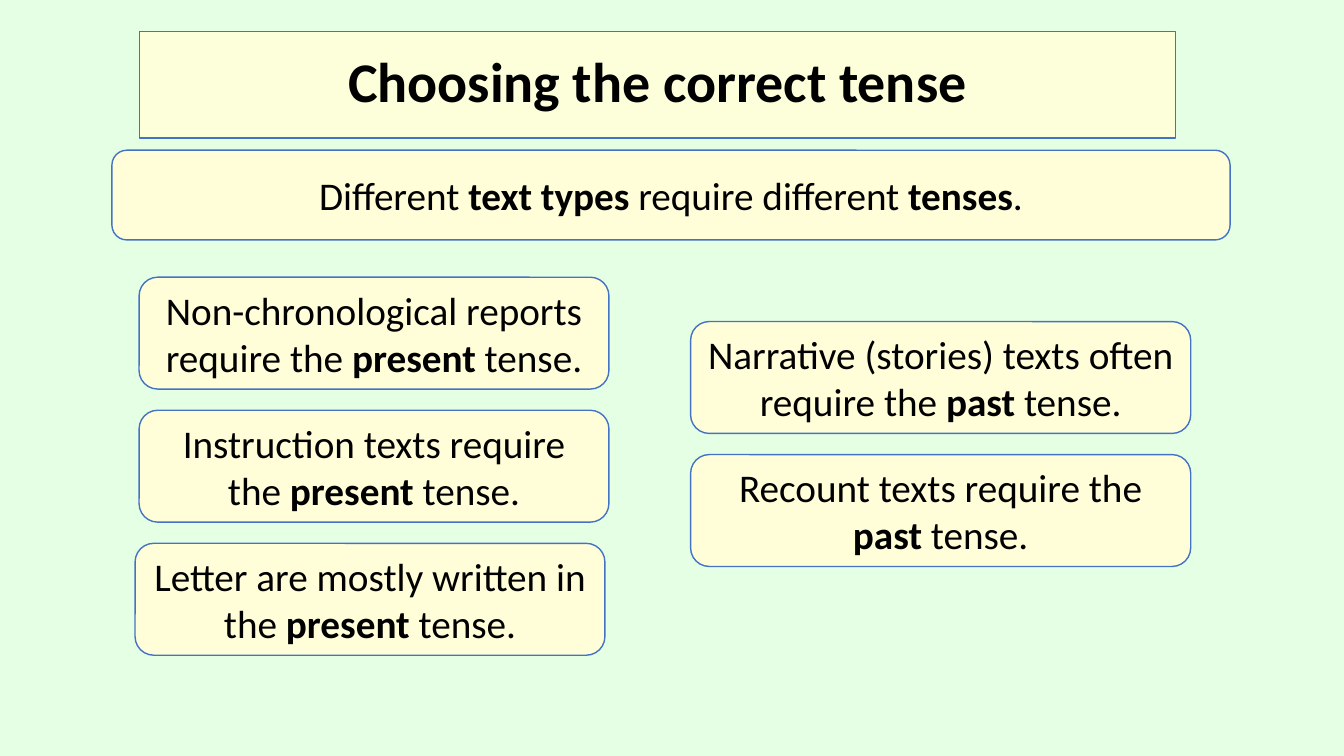
from dataclasses import dataclass

from pptx import Presentation
from pptx.dml.color import RGBColor
from pptx.enum.shapes import MSO_SHAPE
from pptx.enum.text import MSO_ANCHOR, PP_ALIGN
from pptx.util import Inches, Pt

RECT = MSO_SHAPE.RECTANGLE
ROUNDED = MSO_SHAPE.ROUNDED_RECTANGLE
MIDDLE = MSO_ANCHOR.MIDDLE
CENTER = PP_ALIGN.CENTER


@dataclass(frozen=True)
class Theme:
    """Colours, font and sizes of the slide."""
    background: RGBColor = RGBColor.from_string("E5FFE5")
    title_fill: RGBColor = RGBColor.from_string("FDFEDA")
    card_fill: RGBColor = RGBColor.from_string("FFFED8")
    outline: RGBColor = RGBColor.from_string("4472C4")
    text: RGBColor = RGBColor.from_string("000000")
    font: str = "Calibri"
    title_size: Pt = Pt(40)
    body_size: Pt = Pt(28)
    title_line: Pt = Pt(0.75)
    card_line: Pt = Pt(1)


THEME = Theme()
CARD_HEIGHT = 1.11
CARD_PITCH = 1.32

PRESENT_CARDS = [
    (0.04, ["Non-chronological reports require the ", "present", " tense."]),
    (0.04, ["Instruction texts require the ", "present", " tense."]),
    (0, ["Letter are mostly written in the ", "present", " tense."]),
]
PAST_CARDS = [
    (0, ["Narrative (stories) texts often require the ", "past", " tense."]),
    (0, ["Recount texts require the ", "past", " tense."]),
]


def add_box(slide, box, shape, fill, line_width):
    """Add a filled, outlined shape and return its centred paragraph."""
    sp = slide.shapes.add_shape(shape, *map(Inches, box))
    sp.shadow.inherit = False
    sp.fill.solid()
    sp.fill.fore_color.rgb = fill
    sp.line.color.rgb = THEME.outline
    sp.line.width = line_width
    tf = sp.text_frame
    tf.word_wrap = True
    tf.vertical_anchor = MIDDLE
    p = tf.paragraphs[0]
    p.alignment = CENTER
    return p


def add_run(p, text, size, bold):
    """Add a run of text in the theme font."""
    r = p.add_run()
    r.text = text
    for name, value in {"name": THEME.font, "size": size, "bold": bold}.items():
        setattr(r.font, name, value)
    r.font.color.rgb = THEME.text


def add_title(slide, box, text):
    """Add the title panel."""
    p = add_box(slide, box, RECT, THEME.title_fill, THEME.title_line)
    p.line_spacing = 0.9
    add_run(p, text, THEME.title_size, True)


def add_card(slide, box, parts):
    """Add a rounded card whose text parts alternate regular and bold."""
    p = add_box(slide, box, ROUNDED, THEME.card_fill, THEME.card_line)
    for i, text in enumerate(parts):
        add_run(p, text, THEME.body_size, i % 2 == 1)


def add_column(slide, left, top, width, cards):
    """Stack cards at an even pitch, each with its own indent."""
    for i, (indent, parts) in enumerate(cards):
        add_card(slide, (left + indent, top + i * CARD_PITCH, width, CARD_HEIGHT), parts)


def main():
    """Build and save the slide."""
    prs = Presentation()
    prs.slide_width, prs.slide_height = Inches(13.33), Inches(7.5)
    slide = prs.slides.add_slide(prs.slide_layouts[6])
    slide.background.fill.solid()
    slide.background.fill.fore_color.rgb = THEME.background
    add_title(slide, (1.38, 0.31, 10.28, 1.06), "Choosing the correct tense")
    add_card(slide, (1.11, 1.49, 11.09, 0.89),
             ["Different ", "text types ", "require different ", "tenses", "."])
    add_column(slide, 1.34, 2.75, 4.66, PRESENT_CARDS)
    add_column(slide, 6.85, 3.19, 4.96, PAST_CARDS)
    prs.save("out.pptx")


if __name__ == "__main__":
    main()
